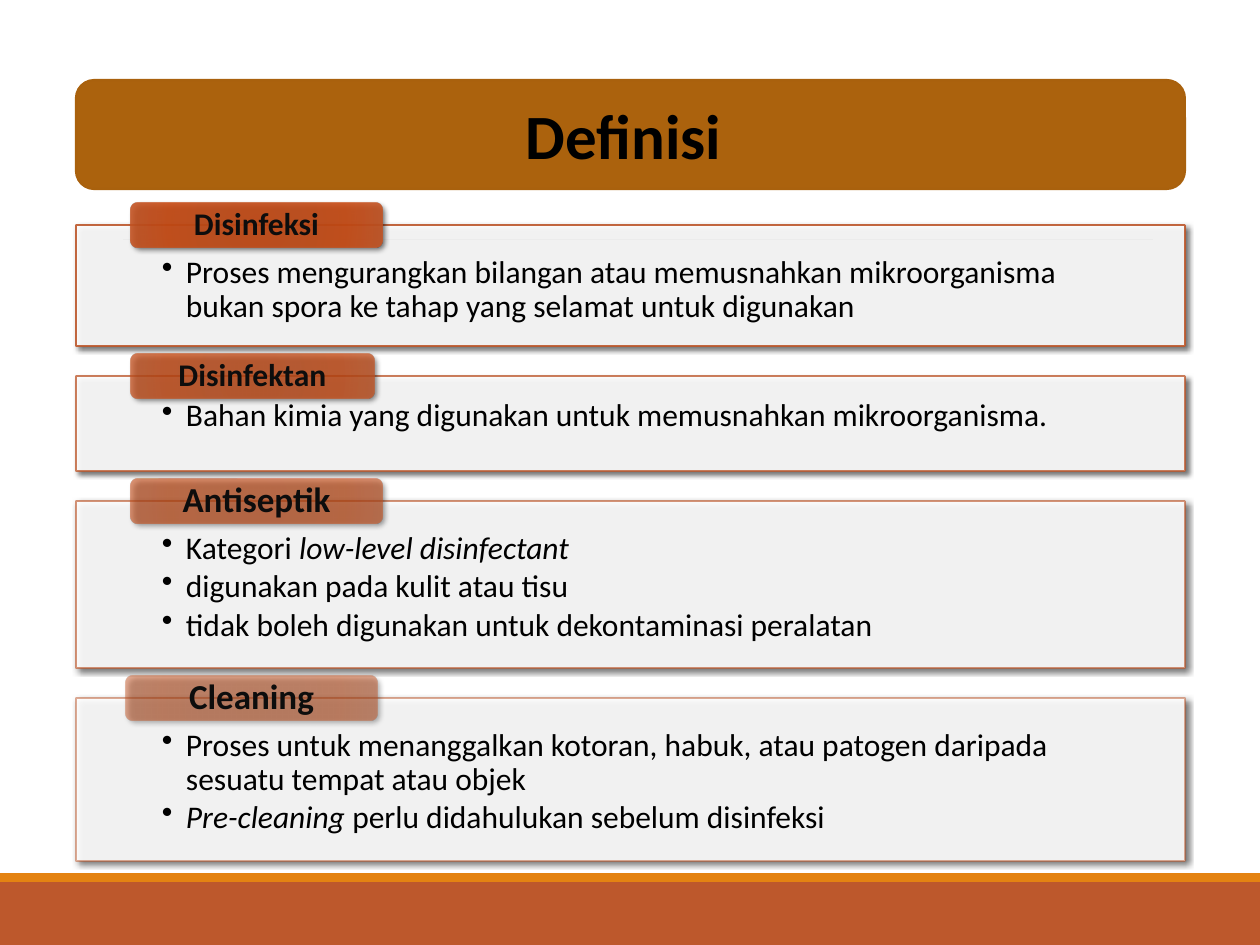
import pptx
import pptx.dml.color
import pptx.enum.shapes
import pptx.enum.text
import pptx.oxml
import pptx.oxml.ns
import pptx.util

RGBColor = pptx.dml.color.RGBColor
SHAPE = pptx.enum.shapes.MSO_SHAPE
ALIGN = pptx.enum.text.PP_ALIGN
ANCHOR = pptx.enum.text.MSO_ANCHOR

BLACK = RGBColor(0x00, 0x00, 0x00)
NEAR_BLACK = RGBColor(0x0D, 0x0D, 0x0D)
WHITE = RGBColor(0xFF, 0xFF, 0xFF)
GREY = RGBColor(0x80, 0x80, 0x80)
RUST = RGBColor(0xBD, 0x58, 0x2C)
ORANGE = RGBColor(0xE4, 0x83, 0x12)
BROWN = RGBColor(0xAB, 0x62, 0x0D)
BROWN_EDGE = RGBColor(0xA9, 0x61, 0x0D)
LABEL_STOPS = [
    (0, RGBColor(0xC4, 0x4A, 0x15)),
    (34, RGBColor(0xC3, 0x4C, 0x18)),
    (70, RGBColor(0xC9, 0x4C, 0x15)),
    (100, RGBColor(0xC4, 0x55, 0x25)),
]

# Content: each bullet is a list of (text, italic) runs
TITLE = "Definisi "
SECTIONS = [
    {"label": "Disinfeksi", "size": 18, "left": 131, "width": 251, "height": 121, "opacity": 90,
     "bullets": [[("Proses mengurangkan bilangan atau memusnahkan mikroorganisma "
                   "bukan spora ke tahap yang selamat untuk digunakan", False)]]},
    {"label": "Disinfektan", "size": 18, "left": 131, "width": 243, "height": 95, "opacity": 77,
     "bullets": [[("Bahan kimia yang digunakan untuk memusnahkan mikroorganisma.", False)]]},
    {"label": "Antiseptik", "size": 20, "left": 131, "width": 251, "height": 167, "opacity": 63,
     "bullets": [[("Kategori ", False), ("low-level disinfectant", True)],
                 [("digunakan pada kulit atau tisu", False)],
                 [("tidak boleh digunakan untuk dekontaminasi peralatan", False)]]},
    {"label": "Cleaning", "size": 20, "left": 126, "width": 251, "height": 163, "opacity": 50,
     "bullets": [[("Proses untuk menanggalkan kotoran, habuk, atau patogen daripada "
                   "sesuatu tempat atau objek", False)],
                 [("Pre-cleaning ", True), ("perlu didahulukan sebelum disinfeksi", False)]]},
]

# Layout in px
PX_PER_INCH = 126
SLIDE_WIDTH, SLIDE_HEIGHT = 1260, 945
PANEL_LEFT, PANEL_WIDTH = 76, 1109
FIRST_PANEL_TOP, PANEL_GAP = 225, 30
LABEL_HEIGHT, LABEL_RISE, LABEL_PAD = 44, 22, 2
BULLET_INDENT = 24


def px(length):
    return pptx.util.Emu(round(length * 914400 / PX_PER_INCH))


def parse_drawing(xml):
    namespace = pptx.oxml.ns.nsdecls("a")
    return pptx.oxml.parse_xml(xml.replace(">", f" {namespace}>", 1))


def set_opacity(fill_owner, percent):
    color = fill_owner.find(".//" + pptx.oxml.ns.qn("a:srgbClr"))
    color.append(parse_drawing(f'<a:alpha val="{percent * 1000}"></a:alpha>'))


def add_box(slide, kind, box, fill=None, line=None, line_width=1):
    shape = slide.shapes.add_shape(kind, *map(px, box))
    shape.shadow.inherit = False
    if fill is not None:
        shape.fill.solid()
        shape.fill.fore_color.rgb = fill
    if line is None:
        shape.line.fill.background()
    else:
        shape.line.color.rgb = line
        shape.line.width = pptx.util.Pt(line_width)
    return shape


def add_shadow(shape):
    effects = shape._element.spPr.find(pptx.oxml.ns.qn("a:effectLst"))
    effects.append(parse_drawing(
        '<a:outerShdw blurRad="38100" dist="25400" dir="2700000" rotWithShape="0">'
        '<a:srgbClr val="000000"><a:alpha val="60000"/></a:srgbClr></a:outerShdw>'))


def set_label_gradient(shape, opacity):
    stops = "".join(
        f'<a:gs pos="{position * 1000}"><a:srgbClr val="{color}">'
        f'<a:alpha val="{opacity * 1000}"/></a:srgbClr></a:gs>'
        for position, color in LABEL_STOPS)
    gradient = parse_drawing(
        f'<a:gradFill><a:gsLst>{stops}</a:gsLst><a:path path="circle">'
        '<a:fillToRect l="100000" t="100000" r="100000" b="100000"/></a:path></a:gradFill>')
    geometry = shape._element.spPr.find(pptx.oxml.ns.qn("a:prstGeom"))
    geometry.addnext(gradient)


def write_text(shape, paragraphs, size=18, color=BLACK, bold=False, align=ALIGN.LEFT,
               anchor=ANCHOR.MIDDLE, insets=(13, 6, 13, 6), spacing=1.0, after=0, bullet=False):
    frame = shape.text_frame
    frame.word_wrap = True
    frame.vertical_anchor = anchor
    frame.margin_left, frame.margin_top, frame.margin_right, frame.margin_bottom = map(px, insets)
    for index, runs in enumerate(paragraphs):
        paragraph = frame.add_paragraph() if index else frame.paragraphs[0]
        paragraph.alignment = align
        paragraph.line_spacing = spacing
        paragraph.space_after = pptx.util.Pt(after)
        if bullet:
            properties = paragraph._p.get_or_add_pPr()
            properties.set("marL", str(px(BULLET_INDENT)))
            properties.set("indent", str(-px(BULLET_INDENT)))
            properties.append(parse_drawing('<a:buChar char="•"></a:buChar>'))
        for text, italic in runs:
            run = paragraph.add_run()
            run.text = text
            run.font.name = "Calibri"
            run.font.size = pptx.util.Pt(size)
            run.font.color.rgb = color
            run.font.bold = bold
            run.font.italic = italic


def add_section(slide, section, top):
    # Panel with its bullets
    panel_box = (PANEL_LEFT, top, PANEL_WIDTH, section["height"])
    panel = add_box(slide, SHAPE.RECTANGLE, panel_box, WHITE, RUST)
    set_opacity(panel._element.spPr.find(pptx.oxml.ns.qn("a:solidFill")), 90)
    set_opacity(panel.line._ln, section["opacity"])
    add_shadow(panel)
    body = slide.shapes.add_textbox(*map(px, panel_box))
    write_text(body, section["bullets"], anchor=ANCHOR.TOP, insets=(86, 31, 86, 18),
               spacing=0.9, after=2.5, bullet=True)

    # Label across the panel's top edge
    left, label_top, width = section["left"], top - LABEL_RISE, section["width"]
    label = add_box(slide, SHAPE.ROUNDED_RECTANGLE, (left, label_top, width, LABEL_HEIGHT))
    set_label_gradient(label, section["opacity"])
    add_shadow(label)
    caption = slide.shapes.add_textbox(
        px(left + LABEL_PAD), px(label_top + LABEL_PAD),
        px(width - 2 * LABEL_PAD), px(LABEL_HEIGHT - 2 * LABEL_PAD))
    write_text(caption, [[(section["label"], False)]], size=section["size"], color=NEAR_BLACK,
               bold=True, align=ALIGN.CENTER, insets=(29, 0, 29, 0), spacing=0.9)


def main():
    presentation = pptx.Presentation()
    presentation.slide_width, presentation.slide_height = px(SLIDE_WIDTH), px(SLIDE_HEIGHT)
    slide = presentation.slides.add_slide(presentation.slide_layouts[6])

    # Footer bands and rule
    add_box(slide, SHAPE.RECTANGLE, (0, 882, SLIDE_WIDTH, 63), RUST)
    add_box(slide, SHAPE.RECTANGLE, (0, 873, SLIDE_WIDTH, 9), ORANGE)
    rule = slide.shapes.add_connector(
        pptx.enum.shapes.MSO_CONNECTOR.STRAIGHT, px(123), px(239), px(1153), px(239))
    rule.line.color.rgb = GREY
    rule.line.width = pptx.util.Pt(0.5)
    rule._element.spPr.append(parse_drawing("<a:effectLst></a:effectLst>"))

    # Title
    title = add_box(slide, SHAPE.ROUNDED_RECTANGLE, (PANEL_LEFT, 80, PANEL_WIDTH, 109),
                    BROWN, BROWN_EDGE, 1.25)
    write_text(title, [[(TITLE, False)]], size=36, bold=True, align=ALIGN.CENTER)

    # Sections, stacked with equal gaps
    top = FIRST_PANEL_TOP
    for section in SECTIONS:
        add_section(slide, section, top)
        top += section["height"] + PANEL_GAP

    presentation.save("out.pptx")


if __name__ == "__main__":
    main()
